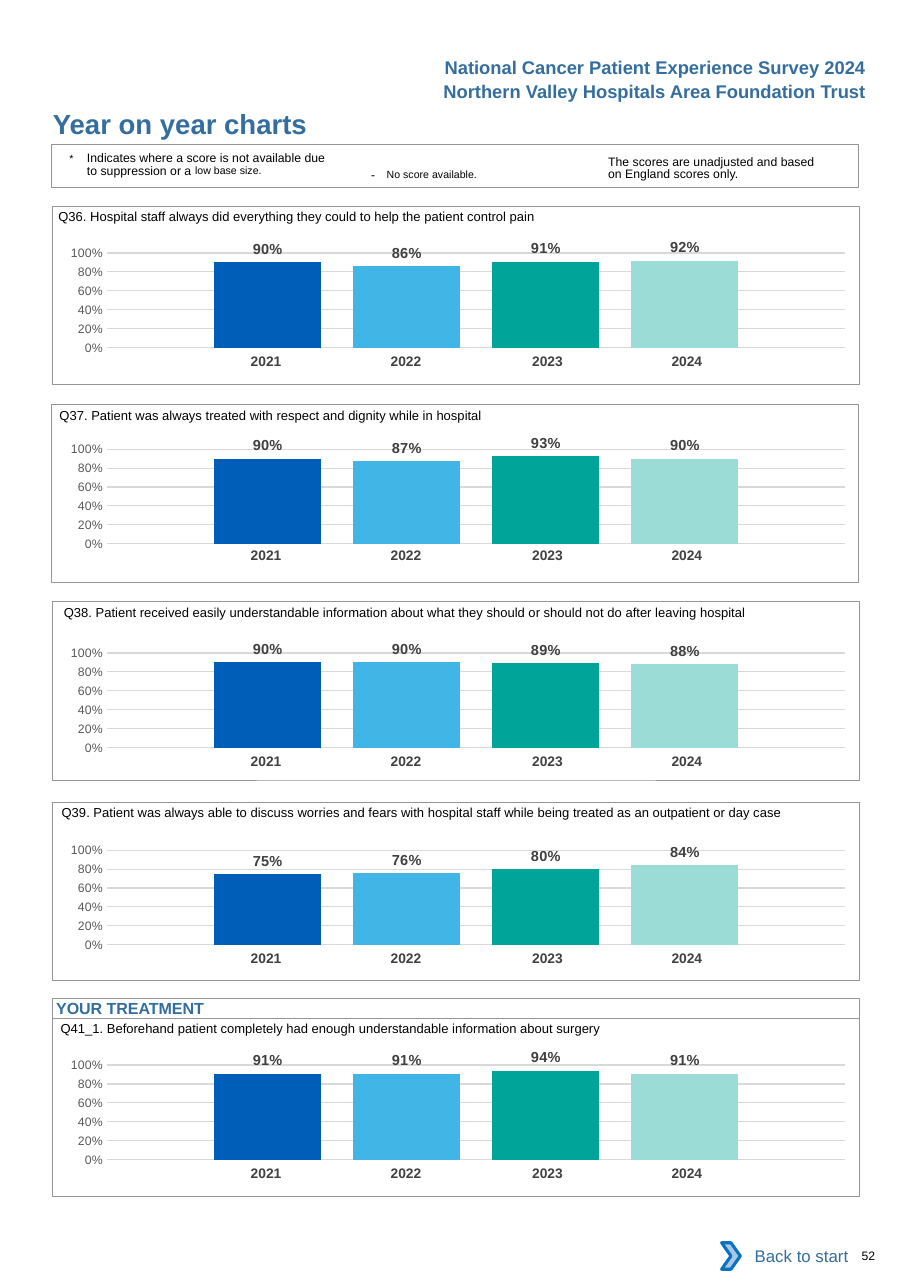
"""Build the year on year charts page of a patient experience survey report."""
from dataclasses import dataclass
from lxml import etree
from pptx import Presentation
from pptx.chart.data import CategoryChartData
from pptx.dml.color import RGBColor
from pptx.enum.chart import XL_CHART_TYPE, XL_LABEL_POSITION, XL_TICK_MARK
from pptx.enum.shapes import MSO_SHAPE
from pptx.enum.text import MSO_ANCHOR, PP_ALIGN
from pptx.oxml import parse_xml
from pptx.oxml.ns import nsdecls, qn
from pptx.util import Inches, Pt


@dataclass(frozen=True)
class Theme:
    font: str = "Arial"
    chart_font: str = "Calibri"
    heading: RGBColor = RGBColor(0x33, 0x6E, 0x9F)
    text: RGBColor = RGBColor(0, 0, 0)
    border: RGBColor = RGBColor(0x93, 0x95, 0x98)
    year: RGBColor = RGBColor(0x41, 0x40, 0x42)
    axis: RGBColor = RGBColor(0x59, 0x59, 0x59)
    label: RGBColor = RGBColor(0x40, 0x40, 0x40)
    grid: RGBColor = RGBColor(0xD9, 0xD9, 0xD9)
    white: RGBColor = RGBColor(0xFF, 0xFF, 0xFF)
    arrow: RGBColor = RGBColor(0xA8, 0xC7, 0xE9)
    arrow_line: RGBColor = RGBColor(0x0A, 0x74, 0xBB)
    bars: tuple = ("005EB8", "41B6E6", "00A499", "9CDCD7")
    title_size: float = 18
    header_size: float = 12
    link_size: float = 11
    section_size: float = 10.5
    chart_size: float = 10
    label_size: float = 9.5
    year_size: float = 9
    question_size: float = 8.5
    small_size: float = 8
    raised_size: float = 12


theme = Theme()
prs = Presentation()
prs.slide_width, prs.slide_height = Inches(8.26), Inches(11.69)
s = prs.slides.add_slide(prs.slide_layouts[6])


def set_font(font, size, color, bold=False, name=theme.font):
    font.name, font.size, font.bold = name, Pt(size), bold
    font.color.rgb = color


def add_text(box, text, size, color, bold=False, inset=0, align=PP_ALIGN.LEFT):
    if isinstance(box, tuple):
        box = s.shapes.add_textbox(*map(Inches, box))
    tf = box.text_frame
    tf.word_wrap = True
    tf.margin_left = tf.margin_right = Inches(inset)
    tf.margin_top = tf.margin_bottom = Inches(inset / 2)
    p = tf.paragraphs[0]
    p.text, p.alignment = text, align
    set_font(p.font, size, color, bold)
    return tf


add_text((7.82, 11.33, 0.4, 0.13), "52", theme.small_size, theme.text)
add_text((0.48, 0.97, 4.5, 0.3), "Year on year charts",
         theme.title_size, theme.heading, True)
headers = ("National Cancer Patient Experience Survey 2024",
           "Northern Valley Hospitals Area Foundation Trust")
for top, header in zip((0.46, 0.68), headers):
    add_text((3.2, top, 4.76, 0.3), header, theme.header_size, theme.heading,
             True, 0.1, PP_ALIGN.RIGHT)

panels = (
    (0.48, 1.87, 1.8, 0.53, 2.11, 3.16, (0.90, 0.86, 0.91, 0.92),
     "Q36. Hospital staff always did everything they could to help the patient control pain"),
    (0.47, 3.67, 3.61, 0.54, 3.89, 4.92, (0.90, 0.87, 0.93, 0.90),
     "Q37. Patient was always treated with respect and dignity while in hospital"),
    (0.48, 5.46, 5.4, 0.58, 5.74, 6.79, (0.90, 0.90, 0.89, 0.88),
     "Q38. Patient received easily understandable information about what they should or should not do after leaving hospital"),
    (0.48, 7.28, 7.21, 0.56, 7.53, 8.58, (0.75, 0.76, 0.80, 0.84),
     "Q39. Patient was always able to discuss worries and fears with hospital staff while being treated as an outpatient or day case"),
    (0.48, 9.24, 9.17, 0.55, 9.48, 10.53, (0.91, 0.91, 0.94, 0.91),
     "Q41_1. Beforehand patient completely had enough understandable information about surgery"),
)
years = ("2021", "2022", "2023", "2024")
year_widths = (1.27, 1.27, 1.34, 1.27)
year_margins = (0, 0, 0.04, 0.12)
plot_layout = (("layoutTarget", "inner"), ("xMode", "edge"), ("yMode", "edge"),
               ("x", "0.08"), ("y", "0.145"), ("w", "0.915"), ("h", "0.666"))

for left, top, title_top, title_left, chart_top, years_top, scores, question in panels:
    add_text((title_left, title_top + 0.09, 7.2, 0.15), question,
             theme.question_size, theme.text)

    table = s.shapes.add_table(1, 4, Inches(1.73), Inches(years_top),
                               Inches(sum(year_widths)), Inches(0.27)).table
    table.first_row = table.horz_banding = False
    for i, year in enumerate(years):
        table.columns[i].width = Inches(year_widths[i])
        cell = table.cell(0, i)
        cell.fill.background()
        cell.margin_right = Inches(year_margins[i])
        p = cell.text_frame.paragraphs[0]
        p.text, p.alignment = year, PP_ALIGN.CENTER
        set_font(p.font, theme.year_size, theme.year, True)

    data = CategoryChartData(number_format="0%")
    data.categories = ["1"]
    for i, score in enumerate(scores, 1):
        data.add_series(f"Series {i}", [score])
    chart = s.shapes.add_chart(XL_CHART_TYPE.COLUMN_CLUSTERED, Inches(0.39),
                               Inches(chart_top), Inches(7.32), Inches(1.29), data).chart
    chart.has_legend = chart.has_title = False
    set_font(chart.font, theme.chart_size, theme.text, name=theme.chart_font)
    chart.category_axis.visible = False
    axis = chart.value_axis
    axis.minimum_scale, axis.maximum_scale, axis.major_unit = 0, 1, 0.2
    axis.major_tick_mark = axis.minor_tick_mark = XL_TICK_MARK.NONE
    axis.format.line.fill.background()
    axis.major_gridlines.format.line.color.rgb = theme.grid
    axis.major_gridlines.format.line.width = Pt(0.75)
    axis.tick_labels.number_format = "0%"
    axis.tick_labels.number_format_is_linked = False
    set_font(axis.tick_labels.font, theme.small_size, theme.axis)
    plot = chart.plots[0]
    plot.gap_width, plot.overlap, plot.vary_by_categories = 200, -30, False
    for series, color in zip(plot.series, theme.bars):
        series.format.fill.solid()
        series.format.fill.fore_color.rgb = RGBColor.from_string(color)
        labels = series.data_labels
        labels.show_value, labels.position = True, XL_LABEL_POSITION.OUTSIDE_END
        labels.number_format, labels.number_format_is_linked = "0%", False
        set_font(labels.font, theme.label_size, theme.label, True)
    area = chart.element.find(".//" + qn("c:plotArea"))
    for old in area.findall(qn("c:layout")):
        area.remove(old)
    layout = parse_xml(f"<c:layout {nsdecls('c')}><c:manualLayout/></c:layout>")
    for tag, value in plot_layout:
        etree.SubElement(layout[0], qn("c:" + tag)).set("val", value)
    area.insert(0, layout)

frames = [(left, top, 1.62, 0.5) for left, top, *rest in panels]
frames += [(0.47, 1.31, 0.39, 0.75), (0.48, 9.06, 0.18, 0.5)]
for left, top, height, weight in frames:
    sp = s.shapes.add_shape(MSO_SHAPE.RECTANGLE, Inches(left), Inches(top),
                            Inches(7.32), Inches(height))
    sp.shadow.inherit = False
    sp.fill.background()
    sp.line.color.rgb, sp.line.width = theme.border, Pt(weight)
tf = add_text(sp, "YOUR TREATMENT", theme.section_size, theme.heading, True)
tf.margin_left = Inches(0.03)
tf.vertical_anchor = MSO_ANCHOR.MIDDLE

notes = (
    ((0.63, 1.4, 2.4, 0.25), 0.16, 8.1,
     (("*", 3), ("\tIndicates where a score is not available due to suppression or a ", 0),
      ("low base size.", 7))),
    ((3.37, 1.46, 1.7, 0.2), 0.14, None, (("-\t", 0), ("No score available.", 3))),
    ((5.52, 1.42, 2.01, 0.25), 0, 8.1,
     (("The scores are unadjusted and based on England scores only.", 0),)),
)
for box, hang, spacing, parts in notes:
    p = add_text(box, "", theme.small_size, theme.text).paragraphs[0]
    if spacing:
        p.line_spacing = Pt(spacing)
    pPr = p._p.get_or_add_pPr()
    pPr.set("marL", str(Inches(hang)))
    pPr.set("indent", str(-Inches(hang)))
    for text, raise_by in parts:
        r = p.add_run()
        r.text = text
        set_font(r.font, theme.raised_size if raise_by else theme.small_size, theme.text)
        if raise_by:
            r._r.get_or_add_rPr().set("baseline", str(raise_by * 1000))

link = s.shapes.add_shape(MSO_SHAPE.RECTANGLE, Inches(6.62), Inches(11.19),
                          Inches(1.18), Inches(0.42))
link.shadow.inherit = False
link.fill.solid()
link.fill.fore_color.rgb = theme.white
link.line.fill.background()
tf = add_text(link, "Back to start", theme.link_size, theme.heading,
              inset=0.1, align=PP_ALIGN.RIGHT)
tf.vertical_anchor = MSO_ANCHOR.MIDDLE

arrow = s.shapes.add_shape(MSO_SHAPE.CHEVRON, Inches(6.55), Inches(11.28),
                           Inches(0.17), Inches(0.24))
arrow.shadow.inherit = False
arrow.fill.solid()
arrow.fill.fore_color.rgb = theme.arrow
arrow.line.color.rgb, arrow.line.width = theme.arrow_line, Pt(2)

prs.save("out.pptx")
